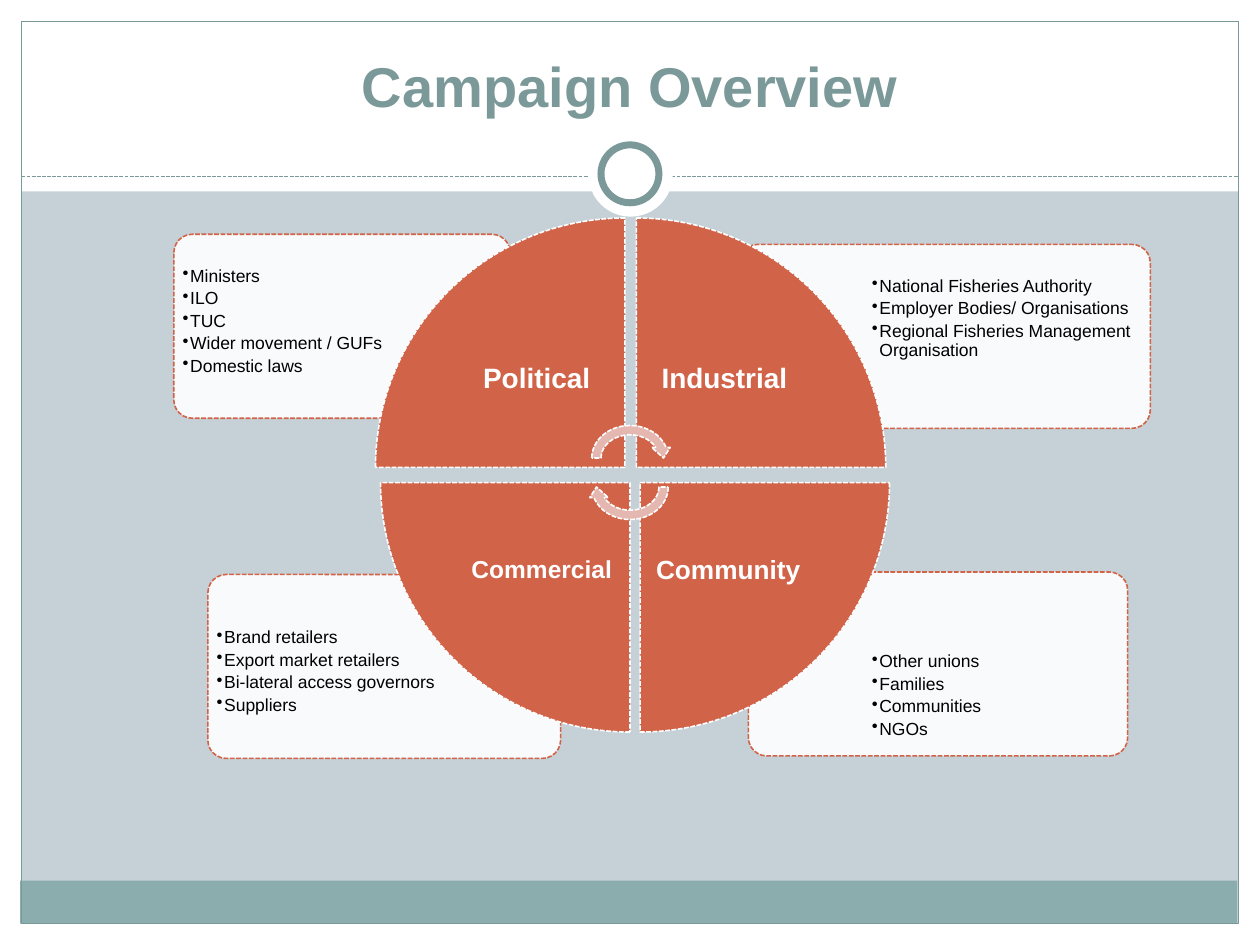
"""Build the Campaign Overview slide: four campaign areas around a cycle."""
from dataclasses import dataclass

import pptx
import pptx.dml.color
import pptx.enum.dml
import pptx.enum.shapes
import pptx.enum.text
import pptx.oxml.ns
import pptx.util
from lxml import etree

Inches = pptx.util.Inches
Pt = pptx.util.Pt
Shape = pptx.enum.shapes.MSO_SHAPE
Anchor = pptx.enum.text.MSO_ANCHOR
Align = pptx.enum.text.PP_ALIGN
qn = pptx.oxml.ns.qn

Frame = tuple[float, float, float, float]
WHITE, TEAL, RUST, PINK = "FFFFFF", "7C999A", "D16349", "E5B7B1"
WEDGE, LABEL = 1.98, 1.4


@dataclass
class Area:
    name: str
    size: int
    wedge_left: float
    wedge_top: float
    rotation: int
    card: Frame
    notes: Frame
    points: list[str]


AREAS = [
    Area("Community", 15, 5.08, 3.83, 180, (5.94, 4.54, 3.01, 1.46), (6.88, 5.14, 2.04, 0.82),
         ["Other unions", "Families", "Communities", "NGOs"]),
    Area("Commercial", 14, 3.02, 3.83, 270, (1.65, 4.56, 2.8, 1.46), (1.68, 4.95, 1.9, 1.03),
         ["Brand retailers", "Export market retailers", "Bi-lateral access governors", "Suppliers"]),
    Area("Industrial", 16, 5.05, 1.73, 90, (5.87, 1.94, 3.26, 1.46), (6.88, 2.16, 2.22, 0.84),
         ["National Fisheries Authority", "Employer Bodies/ Organisations",
          "Regional Fisheries Management Organisation"]),
    Area("Political", 16, 2.98, 1.73, 0, (1.38, 1.86, 2.67, 1.46), (1.41, 2.08, 1.81, 0.84),
         ["Ministers", "ILO", "TUC", "Wider movement / GUFs", "Domestic laws"]),
]


def colour(value: str) -> pptx.dml.color.RGBColor:
    """Turn a hex string into a colour."""
    return pptx.dml.color.RGBColor.from_string(value)


def style_line(line, value: str, width: float, dashed: bool) -> None:
    """Set the colour, width and dash of a line."""
    line.color.rgb = colour(value)
    line.width = Pt(width)
    if dashed:
        line.dash_style = pptx.enum.dml.MSO_LINE.SQUARE_DOT


def add_figure(page, kind, frame: Frame, fill: str | None = None, line: str | None = None,
               width: float = 0.9, dashed: bool = False, rotation: int = 0):
    """Add a preset shape with a plain fill and outline."""
    figure = page.shapes.add_shape(kind, *map(Inches, frame))
    figure.shadow.inherit = False
    figure.rotation = rotation
    if fill:
        figure.fill.solid()
        figure.fill.fore_color.rgb = colour(fill)
    else:
        figure.fill.background()
    if line:
        style_line(figure.line, line, width, dashed)
    else:
        figure.line.fill.background()
    return figure


def format_paragraph(para, size: int, value: str, bold: bool = False) -> None:
    """Set the font of every run in a paragraph."""
    for span in para.runs:
        span.font.name = "Arial"
        span.font.size = Pt(size)
        span.font.bold = bold
        span.font.color.rgb = colour(value)


def add_text(page, frame: Frame, text: str, inset: float):
    """Add a wrapping text box and return its text frame."""
    body = page.shapes.add_textbox(*map(Inches, frame)).text_frame
    body.word_wrap = True
    body.margin_left = body.margin_right = body.margin_top = body.margin_bottom = Inches(inset)
    body.text = text
    return body


def add_card(page, area: Area) -> None:
    """Draw the rounded card of an area with its bulleted points."""
    card = add_figure(page, Shape.ROUNDED_RECTANGLE, area.card, WHITE, RUST, dashed=True)
    card.adjustments[0] = 0.1
    tint = card.fill._xPr.find(qn("a:solidFill"))[0]
    etree.SubElement(tint, qn("a:alpha"), val="90000")
    for para in add_text(page, area.notes, "\n".join(area.points), 0.04).paragraphs:
        properties = para._p.get_or_add_pPr()
        properties.set("marL", str(Inches(0.06)))
        properties.set("indent", str(-Inches(0.06)))
        etree.SubElement(properties, qn("a:buChar"), char="•")
        para.line_spacing = 0.9
        para.space_after = Pt(2)
        format_paragraph(para, 10, "000000")


def add_wedge(page, area: Area) -> None:
    """Draw the quarter circle of an area and its name near the centre."""
    left, top = area.wedge_left, area.wedge_top
    add_figure(page, Shape.PIE_WEDGE, (left, top, WEDGE, WEDGE), RUST, WHITE,
               dashed=True, rotation=area.rotation)
    shift = WEDGE - LABEL
    label_left = left + (shift if area.rotation in (0, 270) else 0)
    label_top = top + (shift if area.rotation in (0, 90) else 0)
    body = add_text(page, (label_left, label_top, LABEL, LABEL), area.name, 0.12)
    body.vertical_anchor = Anchor.MIDDLE
    para = body.paragraphs[0]
    para.alignment = Align.CENTER
    para.line_spacing = 0.9
    format_paragraph(para, area.size, WHITE, True)


def add_backdrop(page) -> None:
    """Draw the white margins, footer band, frame, divider and ring."""
    page.background.fill.solid()
    page.background.fill.fore_color.rgb = colour("C5D1D7")
    for margin in ((0, 7.33, 10, 0.17), (0, 0, 10, 1.52), (0, 0, 0.17, 7.5), (9.83, 0, 0.17, 7.5)):
        add_figure(page, Shape.RECTANGLE, margin, WHITE)
    add_figure(page, Shape.RECTANGLE, (0.16, 6.99, 9.66, 0.34), "8CADAE")
    add_figure(page, Shape.RECTANGLE, (0.17, 0.17, 9.66, 7.16), line=TEAL, width=0.75)
    divider = page.shapes.add_connector(
        pptx.enum.shapes.MSO_CONNECTOR.STRAIGHT, *map(Inches, (0.17, 1.4, 9.83, 1.4)))
    style_line(divider.line, TEAL, 0.75, True)
    etree.SubElement(divider.element.spPr, qn("a:effectLst"))
    add_figure(page, Shape.OVAL, (4.67, 1.05, 0.67, 0.67), WHITE)
    ring = add_figure(page, Shape.OVAL, (4.77, 1.15, 0.46, 0.46), WHITE, TEAL, 4)
    ring.element.addnext(page.shapes.title.element)


def set_title(page, text: str) -> None:
    """Place and format the slide title."""
    title = page.shapes.title
    title.left, title.top, title.width, title.height = map(Inches, (0.5, 0.3, 9, 0.69))
    body = title.text_frame
    body.text = text
    body.auto_size = pptx.enum.text.MSO_AUTO_SIZE.NONE
    body.vertical_anchor = Anchor.BOTTOM
    body.paragraphs[0].alignment = Align.CENTER
    format_paragraph(body.paragraphs[0], 32, TEAL, True)


def main() -> None:
    """Build and save the deck."""
    deck = pptx.Presentation()
    deck.slide_width, deck.slide_height = Inches(10), Inches(7.5)
    page = deck.slides.add_slide(deck.slide_layouts.get_by_name("Title Only"))
    add_backdrop(page)
    set_title(page, "Campaign Overview")
    for area in AREAS:
        add_card(page, area)
    for area in AREAS:
        add_wedge(page, area)
    for top, rotation in ((3.34, 0), (3.57, 180)):
        add_figure(page, Shape.CIRCULAR_ARROW, (4.66, top, 0.68, 0.59), PINK, WHITE,
                   dashed=True, rotation=rotation)
    deck.save("out.pptx")


if __name__ == "__main__":
    main()
